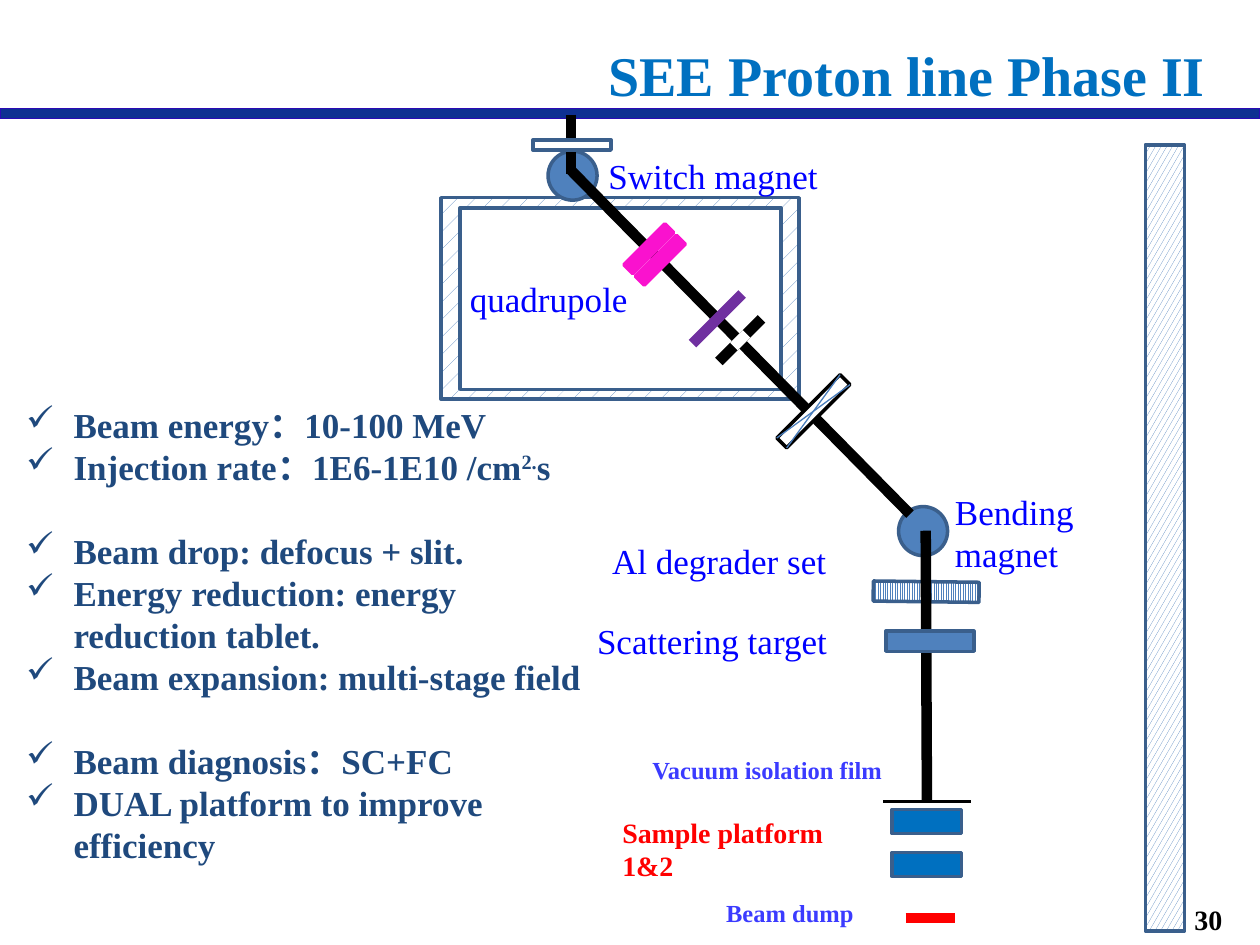
from lxml.etree import SubElement
from pptx import Presentation
from pptx.dml.color import RGBColor
from pptx.enum.dml import MSO_PATTERN
from pptx.enum.shapes import MSO_CONNECTOR, MSO_SHAPE
from pptx.enum.text import MSO_ANCHOR, PP_ALIGN
from pptx.oxml.ns import qn
from pptx.util import Pt

COLORS = {
    "band": "0E3092", "band edge": "2B0BB5", "steel": "4F81BD", "edge": "3A5F8C",
    "cross": "4B7EBC", "white": "FFFFFF", "black": "000000", "magenta": "FA12CE",
    "purple": "7030A0", "red": "FF0000", "sky": "0070C0", "label": "0000FF",
    "note": "3B3BFF", "navy": "1F497D",
}

FORMATS = {
    "title": {"size": Pt(32), "bold": True, "color": "sky"},
    "label": {"size": Pt(20), "bold": False, "color": "label"},
    "note": {"size": Pt(14), "bold": True, "color": "note"},
    "sample": {"size": Pt(16), "bold": True, "color": "red"},
    "number": {"size": Pt(16), "bold": True, "color": "black"},
    "list": {"size": Pt(20), "bold": True, "color": "navy"},
}

BEAM = 6


def rgb(name):
    return RGBColor.from_string(COLORS[name])


class SlideBuilder:
    font_name = "Times New Roman"

    def __init__(self, page):
        self.page = page

    def shape(self, left, top, width, height, fill="steel", line="edge", weight=2,
              kind=MSO_SHAPE.RECTANGLE, pattern=None, rotation=0, parent=None):
        shapes = (parent or self.page).shapes
        item = shapes.add_shape(kind, Pt(left), Pt(top), Pt(width), Pt(height))
        item.shadow.inherit = False
        item.rotation = rotation
        if pattern is None:
            item.fill.solid()
            item.fill.fore_color.rgb = rgb(fill)
        else:
            item.fill.patterned()
            item.fill.pattern = pattern
            item.fill.fore_color.rgb = rgb(fill)
            item.fill.back_color.rgb = rgb("white")
        item.line.color.rgb = rgb(line)
        item.line.width = Pt(weight)
        return item

    def magnet(self, left, top):
        return self.shape(left, top, 28, 28, kind=MSO_SHAPE.OVAL)

    def line(self, x1, y1, x2, y2, color="black", weight=BEAM, parent=None):
        shapes = (parent or self.page).shapes
        item = shapes.add_connector(MSO_CONNECTOR.STRAIGHT, Pt(x1), Pt(y1), Pt(x2), Pt(y2))
        item.line.color.rgb = rgb(color)
        item.line.width = Pt(weight)
        SubElement(item._element.spPr, qn("a:effectLst"))
        return item

    def rising_line(self, x, y, reach, color="black"):
        return self.line(x - reach, y + reach, x + reach, y - reach, color)

    def group(self):
        return self.page.shapes.add_group_shape()

    def style(self, para, style):
        for name, value in FORMATS[style].items():
            if name == "color":
                para.font.color.rgb = rgb(value)
            else:
                setattr(para.font, name, value)
        para.font.name = self.font_name

    def frame(self, left, top, width, height, anchor=MSO_ANCHOR.TOP):
        box = self.page.shapes.add_textbox(Pt(left), Pt(top), Pt(width), Pt(height))
        box.text_frame.word_wrap = True
        box.text_frame.vertical_anchor = anchor
        return box.text_frame

    def text(self, words, left, top, width, height, style="label",
             align=PP_ALIGN.LEFT, anchor=MSO_ANCHOR.TOP, spacing=None):
        para = self.frame(left, top, width, height, anchor).paragraphs[0]
        para.alignment = align
        para.line_spacing = spacing
        para.add_run().text = words
        self.style(para, style)

    def checklist(self, sections, left, top, width, height):
        frame = self.frame(left, top, width, height)
        for section_index, section in enumerate(sections):
            for item_index, parts in enumerate(section):
                first = section_index == item_index == 0
                para = frame.paragraphs[0] if first else frame.add_paragraph()
                if section_index and not item_index:
                    para.space_before = Pt(24)
                properties = para._p.get_or_add_pPr()
                properties.set("marL", str(Pt(27)))
                properties.set("indent", str(-Pt(27)))
                SubElement(properties, qn("a:buChar")).set("char", "✓")
                for part_index, words in enumerate(parts):
                    span = para.add_run()
                    span.text = words
                    if part_index == 1:
                        span._r.get_or_add_rPr().set("baseline", "30000")
                self.style(para, "list")


def main():
    deck = Presentation()
    deck.slide_width, deck.slide_height = Pt(720), Pt(540)
    page = deck.slides.add_slide(deck.slide_layouts[6])
    draw = SlideBuilder(page)

    draw.shape(0, 62, 720, 5.6, "band", "band edge", 0.75)
    draw.magnet(513.5, 289.5)
    draw.shape(252, 113, 204.5, 115, pattern=MSO_PATTERN.PERCENT_5)
    draw.shape(262.8, 118.8, 183.6, 103.7, "white")
    draw.magnet(313.2, 86.4)
    draw.line(326.2, 97.2, 520, 293.8)
    draw.shape(654.5, 82.8, 22.3, 449.3, pattern=MSO_PATTERN.LARGE_CONFETTI)

    quadrupole = draw.group()
    for left in (365.8, 375.1):
        draw.shape(left, 128.9, 7.2, 33.1, "magenta", "magenta", parent=quadrupole)
    quadrupole.rotation = 45

    draw.rising_line(423, 194.4, 12.2)
    draw.rising_line(423, 194.4, 3.6, "white")

    left, top, right, bottom = 460.8, 209.5, 468.8, 260.6
    crossed_plate = draw.group()
    draw.shape(left, top, right - left, bottom - top, "white", "black", parent=crossed_plate)
    for start, end in ((left, right), (right, left)):
        draw.line(start, top, end, bottom, "cross", 0.75, crossed_plate)
    crossed_plate.rotation = 45

    draw.text("quadrupole", 261.4, 154.8, 142.6, 31.7)
    draw.text("Vacuum isolation film", 341.3, 427.7, 194.4, 24.5, "note", PP_ALIGN.CENTER)
    draw.shape(499, 332.4, 60.5, 11.5, pattern=MSO_PATTERN.LIGHT_VERTICAL, rotation=0.7)
    draw.text("Al degrader set", 342.7, 304.6, 172.8, 31.7)
    draw.text("Sample platform 1&2", 348.5, 462.2, 154.8, 46, "sample")
    draw.text("Beam dump", 401, 509.8, 100.8, 24.5, "note", PP_ALIGN.CENTER)
    draw.rising_line(409.9, 182.2, 14.2, "purple")
    draw.line(517.5, 524.6, 545.7, 524.6, "red")
    draw.line(504.7, 457.9, 555.1, 457.9, weight=2)
    draw.line(529, 303.3, 529.7, 457.2)
    draw.shape(506.2, 360.7, 50.4, 11.5)
    draw.text("Scattering target", 334.1, 350.6, 175.7, 31.7)
    draw.line(326.2, 65.5, 326.2, 99.4)
    draw.shape(304.6, 79.9, 44.6, 5.8, "white")
    draw.text("Switch magnet", 340.6, 85, 167.8, 31.7)
    draw.text("Bending magnet", 538.6, 276.5, 100.8, 55.4)
    draw.text("SEE Proton line Phase II", 303.8, 17.3, 429.1, 49.7, "title",
              PP_ALIGN.CENTER, MSO_ANCHOR.MIDDLE)
    draw.checklist([
        [["Beam energy：10-100 MeV"], ["Injection rate：1E6-1E10 /cm", "2.", "s"]],
        [["Beam drop: defocus + slit."], ["Energy reduction: energy reduction tablet."],
         ["Beam expansion: multi-stage field"]],
        [["Beam diagnosis：SC+FC"], ["DUAL platform to improve efficiency"]],
    ], 7.9, 226.8, 342, 298.1)
    for top in (462.6, 487.1):
        draw.shape(509.8, top, 39.6, 13.7, "sky")
    draw.text("30", 605.5, 502.6, 169.9, 33.1, "number", PP_ALIGN.CENTER, spacing=1.5)

    deck.save("out.pptx")


if __name__ == "__main__":
    main()
